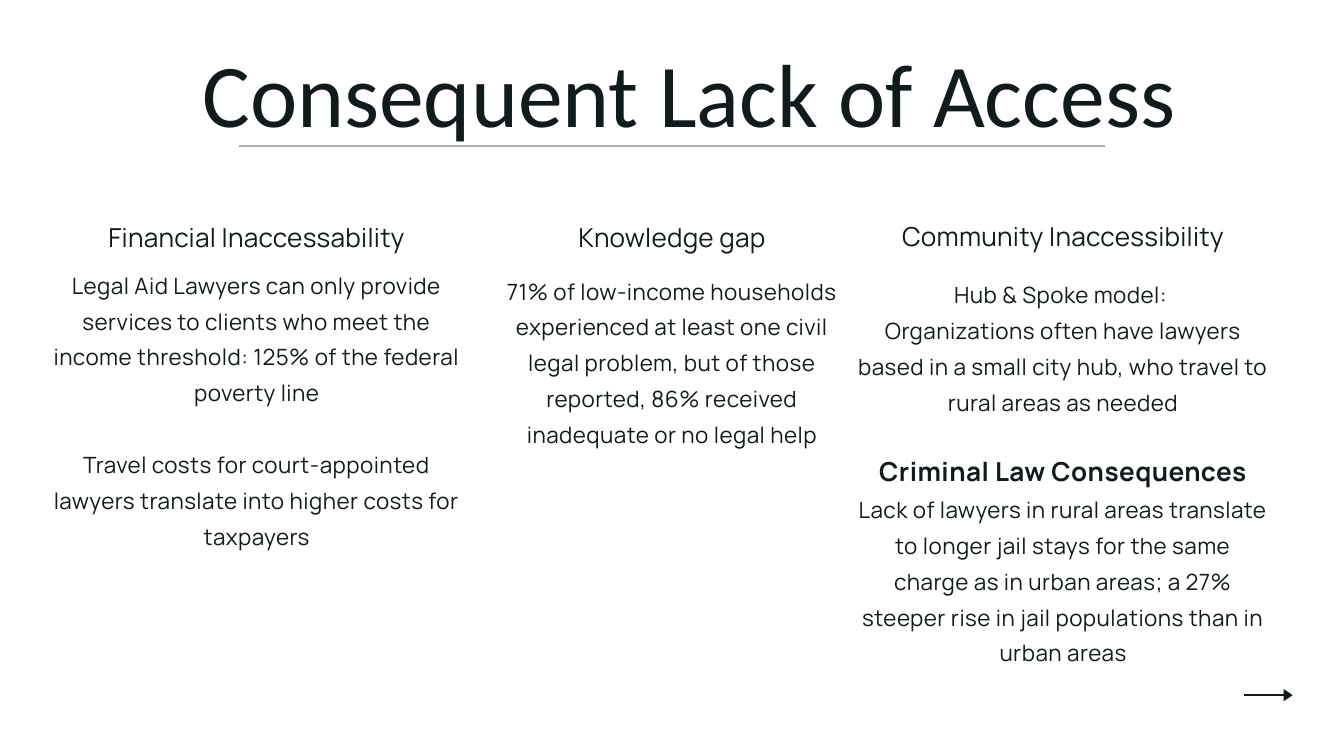
import pptx
import pptx.util
import pptx.dml.color
import pptx.enum.shapes
import pptx.enum.text

Cm, Pt = pptx.util.Cm, pptx.util.Pt
ALIGN = pptx.enum.text.PP_ALIGN
INK = pptx.dml.color.RGBColor(0x11, 0x1B, 0x1E)

# Text styles: font values, letter spacing and line spacing in points
STYLES = {
    "title": ({"name": "Calibri", "size": Pt(96)}, 0, 115.2, ALIGN.LEFT),
    "heading": ({"name": "Manrope", "size": Pt(28)}, 0.3, 39.2, ALIGN.CENTER),
    "body": ({"name": "Manrope", "size": Pt(24)}, 0.5, 38.4, ALIGN.CENTER),
    "strong": ({"name": "Manrope", "size": Pt(28), "bold": True}, 0.5, 38.4, ALIGN.CENTER),
}
GAP = 38.4  # one body line between text groups

TITLE = "Consequent Lack of Access"
HEADING_HEIGHT = 1.3

# Paragraphs are (style, text, space before in points); lengths in cm
COLUMNS = [
    {
        "heading": "Financial Inaccessability",
        "left": 1.94, "width": 15.52, "top": 8.16, "body_top": 9.94, "body_height": 10.69,
        "body": [
            ("body", "Legal Aid Lawyers can only provide services to clients who meet "
                     "the income threshold: 125% of the federal poverty line", 0),
            ("body", "Travel costs for court-appointed lawyers translate into higher "
                     "costs for taxpayers", GAP),
        ],
    },
    {
        "heading": "Knowledge gap",
        "left": 18.63, "width": 13.54, "top": 8.16, "body_top": 10.16, "body_height": 6.63,
        "body": [
            ("body", "71% of low-income households experienced at least one civil legal "
                     "problem, but of those reported, 86% received inadequate or no legal help", 0),
        ],
    },
    {
        "heading": "Community Inaccessibility",
        "left": 32.42, "width": 15.52, "top": 8.13, "body_top": 10.29, "body_height": 14.81,
        "body": [
            ("body", "Hub & Spoke model: ", 0),
            ("body", "Organizations often have lawyers based in a small city hub, who "
                     "travel to rural areas as needed", 0),
            ("strong", "Criminal Law Consequences", GAP),
            ("body", "Lack of lawyers in rural areas translate to longer jail stays for the "
                     "same charge as in urban areas; a 27% steeper rise in jail populations "
                     "than in urban areas", 0),
        ],
    },
]

# Outlines of the "next" arrow in cm
ARROW_SHAFT = [(47.02, 26.24), (48.59, 26.24), (48.59, 26.31), (47.02, 26.31)]
ARROW_HEAD = [(48.52, 26.51), (48.52, 26.05), (48.86, 26.28)]


def add_text(slide, left, top, width, height, paragraphs):
    box = slide.shapes.add_textbox(Cm(left), Cm(top), Cm(width), Cm(height))
    tf = box.text_frame
    tf.word_wrap = True
    for side in ("left", "top", "right", "bottom"):
        setattr(tf, f"margin_{side}", 0)
    for i, (style, text, before) in enumerate(paragraphs):
        font, tracking, leading, align = STYLES[style]
        p = tf.paragraphs[0] if i == 0 else tf.add_paragraph()
        p.alignment = align
        p.line_spacing = Pt(leading)
        if before:
            p.space_before = Pt(before)
        r = p.add_run()
        r.text = text
        for name, value in font.items():
            setattr(r.font, name, value)
        r.font.color.rgb = INK
        if tracking:
            r.font._element.set("spc", str(round(tracking * 100)))


def fill_ink(sp):
    sp.shadow.inherit = False
    sp.fill.solid()
    sp.fill.fore_color.rgb = INK
    sp.line.fill.background()


def add_outline(slide, points):
    start, *rest = [(Cm(x), Cm(y)) for x, y in points]
    builder = slide.shapes.build_freeform(*start)
    builder.add_line_segments(rest, close=True)
    fill_ink(builder.convert_to_shape())


def main():
    prs = pptx.Presentation()
    prs.slide_width, prs.slide_height = Cm(50.8), Cm(28.58)
    slide = prs.slides.add_slide(prs.slide_layouts[6])

    rule = slide.shapes.add_shape(pptx.enum.shapes.MSO_SHAPE.RECTANGLE,
                                  Cm(9.04), Cm(5.51), Cm(32.72), Cm(0.03))
    fill_ink(rule)
    add_text(slide, 7.65, 1.42, 38.51, 4.09, [("title", TITLE, 0)])
    for col in COLUMNS:
        left, width = col["left"], col["width"]
        add_text(slide, left, col["top"], width, HEADING_HEIGHT,
                 [("heading", col["heading"], 0)])
        add_text(slide, left, col["body_top"], width, col["body_height"], col["body"])
    for points in (ARROW_SHAFT, ARROW_HEAD):
        add_outline(slide, points)

    prs.save("out.pptx")


if __name__ == "__main__":
    main()
